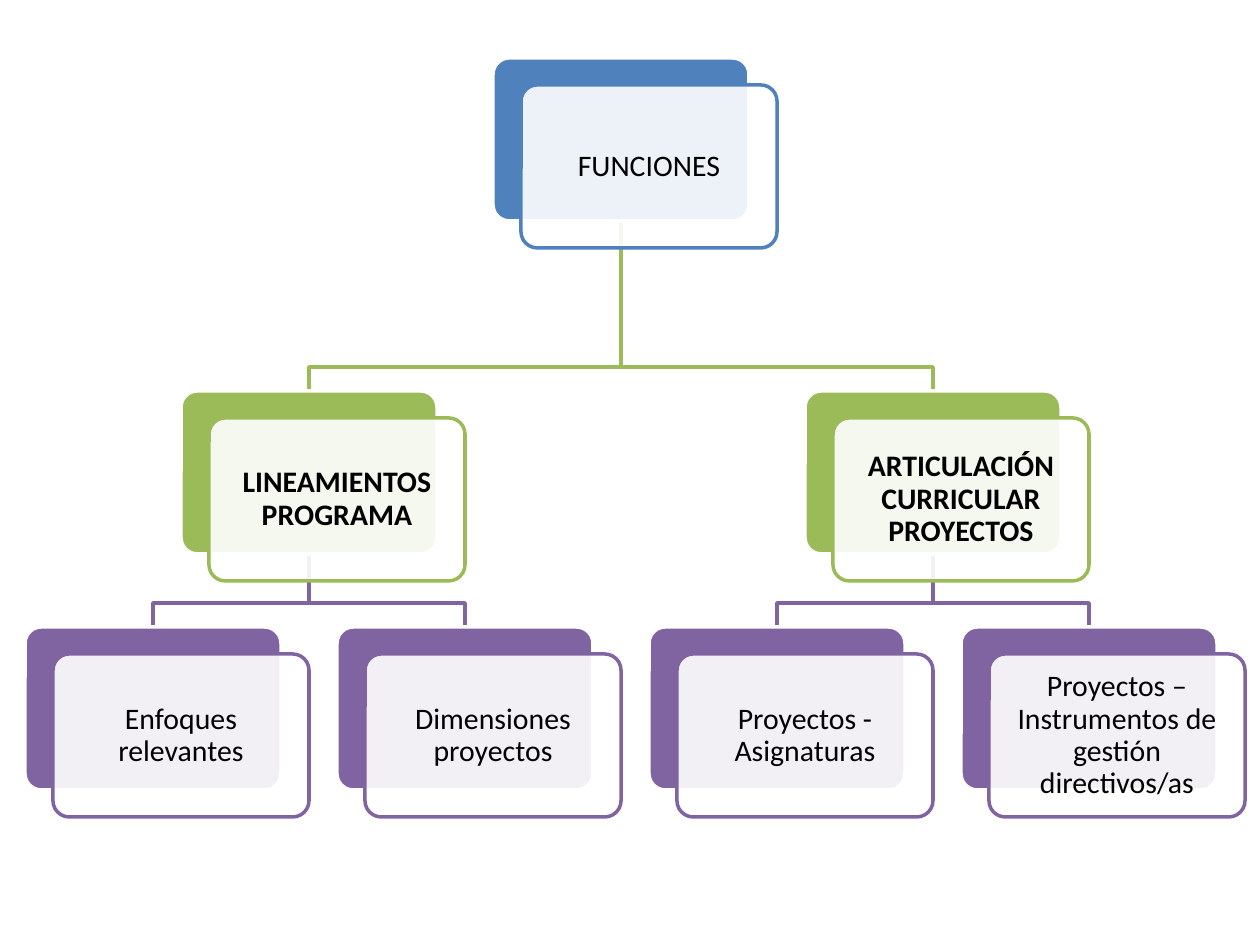
import pptx
import pptx.util
import pptx.dml.color
import pptx.enum.shapes
import pptx.enum.text
import pptx.oxml.ns
import lxml.etree

RGB = pptx.dml.color.RGBColor
BLUE = RGB(0x4F, 0x81, 0xBD)
GREEN = RGB(0x9B, 0xBB, 0x59)
PURPLE = RGB(0x80, 0x64, 0xA2)
WHITE = RGB(0xFF, 0xFF, 0xFF)
BLACK = RGB(0, 0, 0)

TREE = ("FUNCIONES", [
    ("LINEAMIENTOS PROGRAMA", [
        ("Enfoques relevantes", []),
        ("Dimensiones proyectos", []),
    ]),
    ("ARTICULACIÓN CURRICULAR PROYECTOS", [
        ("Proyectos - Asignaturas", []),
        ("Proyectos – Instrumentos de gestión directivos/as", []),
    ]),
])
LEVELS = [(58, BLUE, False), (391, GREEN, True), (627, PURPLE, False)]

WIDE, HIGH = 256, 163
FIRST, STEP = 153, 312
SHIFT_X, SHIFT_Y = 28, 27
BEND, INSET = 24, 9


def px(n):
    return round(n * 914400 / 126)


def place(node, level, nodes, links, leaves):
    text, kids = node
    spot = len(nodes)
    nodes.append(None)
    mids = [place(kid, level + 1, nodes, links, leaves) for kid in kids]
    if mids:
        mid = (mids[0] + mids[-1]) / 2
    else:
        mid = FIRST + STEP * len(leaves)
        leaves.append(text)
    nodes[spot] = (text, level, mid)
    links.extend((mid, kid, level) for kid in mids)
    return mid


def link(shapes, start, end, level):
    top, color, _ = LEVELS[level + 1]
    base = LEVELS[level][0] + HIGH
    path = [(start, base), (start, top - BEND), (end, top - BEND), (end, top)]
    points = [(px(x), px(y)) for x, y in path]
    form = shapes.build_freeform(*points[0])
    form.add_line_segments(points[1:], close=False)
    line = form.convert_to_shape()
    line.shadow.inherit = False
    line.fill.background()
    line.line.color.rgb = color
    line.line.width = pptx.util.Pt(2)


def card(shapes, x, y, fill, edge):
    kind = pptx.enum.shapes.MSO_SHAPE.ROUNDED_RECTANGLE
    box = shapes.add_shape(kind, px(x), px(y), px(WIDE), px(HIGH))
    box.adjustments[0] = 0.1
    box.shadow.inherit = False
    box.fill.solid()
    box.fill.fore_color.rgb = fill
    box.line.color.rgb = edge
    box.line.width = pptx.util.Pt(2)
    return box


def fade(box, percent):
    qn = pptx.oxml.ns.qn
    color = box.fill._xPr.find(qn("a:solidFill")).find(qn("a:srgbClr"))
    lxml.etree.SubElement(color, qn("a:alpha")).set("val", str(percent * 1000))


def write(box, text, bold):
    frame = box.text_frame
    frame.word_wrap = True
    frame.vertical_anchor = pptx.enum.text.MSO_ANCHOR.MIDDLE
    frame.margin_left = frame.margin_right = px(INSET)
    frame.margin_top = frame.margin_bottom = px(INSET)
    para = frame.paragraphs[0]
    para.text = text
    para.alignment = pptx.enum.text.PP_ALIGN.CENTER
    para.line_spacing = 0.9
    para.font.name = "Calibri"
    para.font.size = pptx.util.Pt(17)
    para.font.bold = bold
    para.font.color.rgb = BLACK


def main():
    deck = pptx.Presentation()
    deck.slide_width = px(1260)
    deck.slide_height = px(945)
    shapes = deck.slides.add_slide(deck.slide_layouts[6]).shapes

    nodes, links = [], []
    place(TREE, 0, nodes, links, [])
    for start, end, level in links:
        link(shapes, start, end, level)
    for text, level, mid in nodes:
        top, color, bold = LEVELS[level]
        left = mid - WIDE / 2
        card(shapes, left, top, color, WHITE)
        front = card(shapes, left + SHIFT_X, top + SHIFT_Y, WHITE, color)
        fade(front, 90)
        write(front, text, bold)
    deck.save("out.pptx")


if __name__ == "__main__":
    main()
